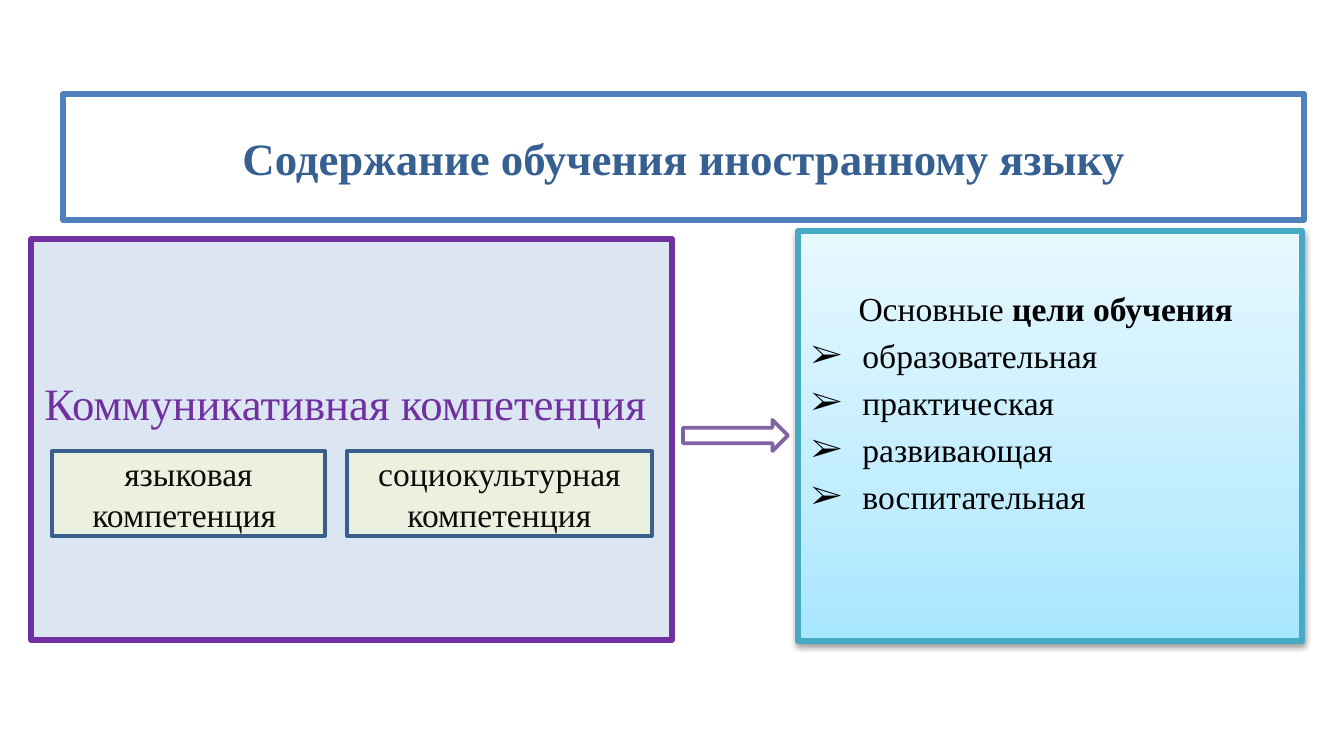
import pptx
import pptx.dml.color
import pptx.enum.shapes
import pptx.enum.text
import pptx.oxml
import pptx.oxml.ns
import pptx.util
from lxml import etree

TITLE = "Содержание обучения иностранному языку"
SKILL = "Коммуникативная компетенция"
PARTS = [("языковая компетенция ", 52, 273), ("социокультурная компетенция", 347, 305)]
HEAD = [("Основные ", False), ("цели обучения ", True)]
GOALS = ["образовательная", "практическая", "развивающая", "воспитательная"]

THEME = {
    "font": "Times New Roman", "big": 24, "small": 18,
    "white": "FFFFFF", "blue": "4F81BD", "title": "376092",
    "pale": "DCE6F2", "purple": "7030A0", "teal": "46AAC5",
    "green": "EBF1DE", "navy": "3A5F8C", "ink": "0D0D0D",
    "black": "000000", "violet": "8064A2",
    "sky": [(0, "A7E6FF"), (35, "C1EDFF"), (100, "E7F8FF")],
}
PX = 914400 / 134.4
INDENT = 51
SHAPE = pptx.enum.shapes.MSO_SHAPE
ALIGN = pptx.enum.text.PP_ALIGN
ANCHOR = pptx.enum.text.MSO_ANCHOR
NS = pptx.oxml.ns.nsdecls("a")


def emu(px):
    return pptx.util.Emu(round(px * PX))


def rgb(name):
    return pptx.dml.color.RGBColor.from_string(THEME[name])


def place(shape, box):
    for key, px in zip(("left", "top", "width", "height"), box):
        setattr(shape, key, emu(px))


def style(shape, fill, line, width):
    if fill:
        shape.fill.solid()
        shape.fill.fore_color.rgb = rgb(fill)
    shape.line.color.rgb = rgb(line)
    shape.line.width = pptx.util.Pt(width)
    shape.shadow.inherit = False


def frame(shape, anchor, top=7):
    text = shape.text_frame
    form = {"word_wrap": True, "vertical_anchor": anchor, "margin_top": emu(top),
            "auto_size": pptx.enum.text.MSO_AUTO_SIZE.NONE}
    for key, val in form.items():
        setattr(text, key, val)
    return text


def write(para, runs, size, color, align):
    para.alignment = align
    for words, bold in runs:
        run = para.add_run()
        run.text = words
        form = {"name": THEME["font"], "size": pptx.util.Pt(THEME[size]), "bold": bold}
        for key, val in form.items():
            setattr(run.font, key, val)
        run.font.color.rgb = rgb(color)


def mark(para, char=None):
    """Set the hanging indent and the bullet, or no bullet."""
    props = para._p.get_or_add_pPr()
    props.set("marL", str(emu(INDENT)))
    props.set("indent", str(-emu(INDENT)))
    if char:
        etree.SubElement(props, pptx.oxml.ns.qn("a:buFont"), typeface=THEME["font"])
        etree.SubElement(props, pptx.oxml.ns.qn("a:buChar"), char=char)
    else:
        etree.SubElement(props, pptx.oxml.ns.qn("a:buNone"))


def shade(shape):
    """Give a three-stop gradient and a soft shadow below."""
    stops = "".join(f'<a:gs pos="{pos * 1000}"><a:srgbClr val="{hue}"/></a:gs>'
                    for pos, hue in THEME["sky"])
    props = shape._element.spPr
    fill = pptx.oxml.parse_xml(f'<a:gradFill {NS} rotWithShape="1"><a:gsLst>{stops}</a:gsLst>'
                               '<a:lin ang="16200000" scaled="0"/></a:gradFill>')
    props.find(pptx.oxml.ns.qn("a:ln")).addprevious(fill)
    glow = pptx.oxml.parse_xml(
        f'<a:outerShdw {NS} blurRad="{pptx.util.Pt(3.1)}" dist="{pptx.util.Pt(1.6)}" '
        f'dir="5400000" rotWithShape="0"><a:srgbClr val="{THEME["black"]}">'
        '<a:alpha val="38000"/></a:srgbClr></a:outerShdw>')
    props.find(pptx.oxml.ns.qn("a:effectLst")).append(glow)


def main():
    deck = pptx.Presentation()
    deck.slide_width, deck.slide_height = emu(1344), emu(756)
    slide = deck.slides.add_slide(deck.slide_layouts[3])
    title, skill, goals = slide.placeholders

    place(title, (63, 94, 1241, 126))
    style(title, "white", "blue", 3)
    write(frame(title, ANCHOR.MIDDLE).paragraphs[0], [(TITLE, True)],
          "big", "title", ALIGN.CENTER)

    place(skill, (31, 239, 641, 401))
    style(skill, "pale", "purple", 3)
    para = frame(skill, ANCHOR.TOP, 137).paragraphs[0]
    mark(para)
    para.space_before = pptx.util.Pt(0)
    write(para, [(SKILL, False)], "big", "purple", ALIGN.LEFT)

    place(goals, (798, 231, 504, 410))
    style(goals, None, "teal", 3)
    shade(goals)
    text = frame(goals, ANCHOR.TOP, 57)
    para = text.paragraphs[0]
    mark(para)
    para.space_before = pptx.util.Pt(0)
    write(para, HEAD, "small", "black", ALIGN.CENTER)
    for goal in GOALS:
        para = text.add_paragraph()
        mark(para, "➢")
        write(para, [(goal, False)], "small", "black", ALIGN.LEFT)

    for words, left, width in PARTS:
        part = slide.shapes.add_shape(SHAPE.RECTANGLE, 0, 0, 0, 0)
        place(part, (left, 451, width, 85))
        style(part, "green", "navy", 2)
        write(frame(part, ANCHOR.MIDDLE).paragraphs[0], [(words, False)],
              "small", "ink", ALIGN.CENTER)

    arrow = slide.shapes.add_shape(SHAPE.RIGHT_ARROW, 0, 0, 0, 0)
    place(arrow, (683, 420, 105, 31))
    style(arrow, "white", "violet", 2)
    deck.save("out.pptx")


if __name__ == "__main__":
    main()
